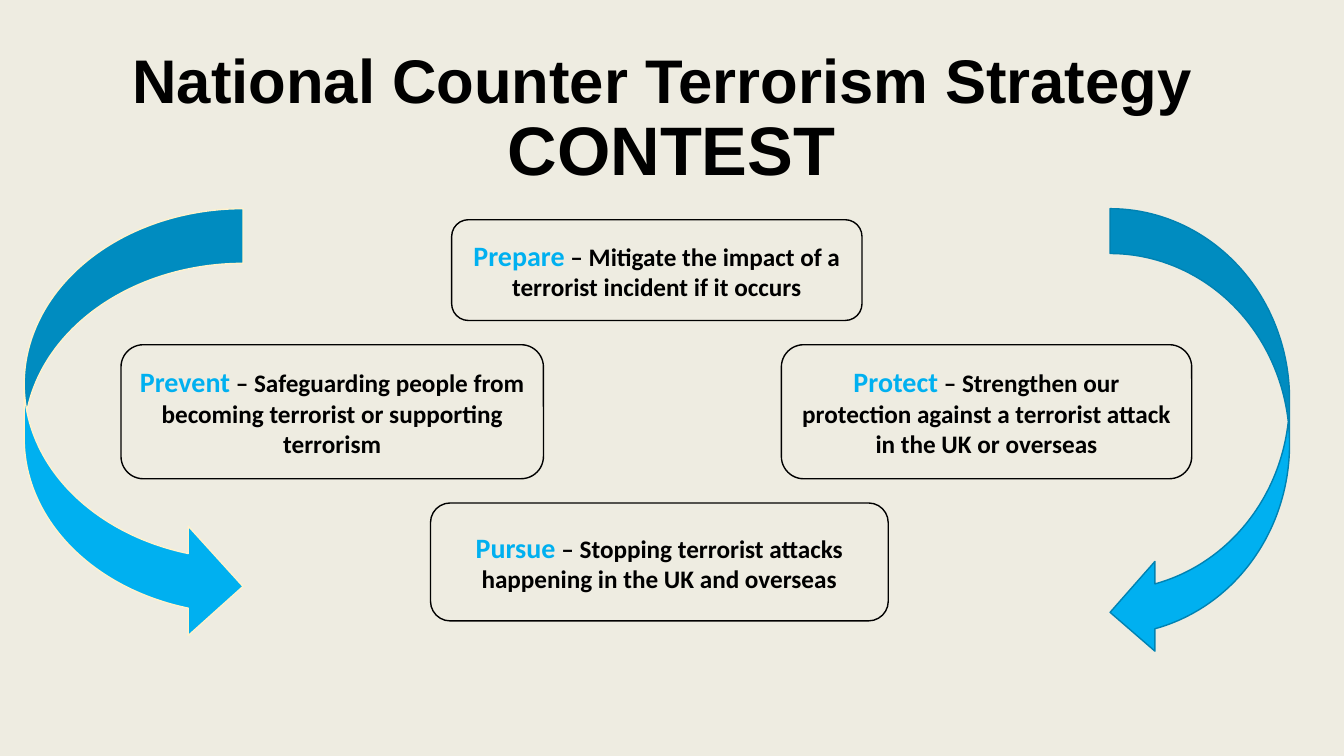
from pptx import Presentation
from pptx.dml.color import RGBColor
from pptx.enum.shapes import MSO_SHAPE
from pptx.enum.text import MSO_ANCHOR, PP_ALIGN
from pptx.util import Inches, Pt

ROUNDED = MSO_SHAPE.ROUNDED_RECTANGLE
RIGHT_ARROW = MSO_SHAPE.CURVED_RIGHT_ARROW
LEFT_ARROW = MSO_SHAPE.CURVED_LEFT_ARROW
MIDDLE, BOTTOM = MSO_ANCHOR.MIDDLE, MSO_ANCHOR.BOTTOM
CENTER = PP_ALIGN.CENTER

COLORS = {
    "paper": "EEECE1",
    "ink": "000000",
    "blue": "00B0F0",
    "dark blue": "0082B2",
    "cream": "FFF2CC",
}

STRANDS = [
    ("Prepare", "Mitigate the impact of a terrorist incident if it occurs",
     (4.48, 2.18, 4.07, 1)),
    ("Protect", "Strengthen our protection against a terrorist attack in the UK or overseas",
     (7.75, 3.42, 4.07, 1.33)),
    ("Pursue", "Stopping terrorist attacks happening in the UK and overseas",
     (4.27, 4.99, 4.54, 1.17)),
    ("Prevent", "Safeguarding people from becoming terrorist or supporting terrorism",
     (1.2, 3.42, 4.19, 1.33)),
]

ARROWS = [
    (RIGHT_ARROW, (0.24, 2.07, 2.17, 4.29), "cream"),
    (LEFT_ARROW, (11.01, 2.07, 1.78, 4.45), "dark blue"),
]


def color(name):
    return RGBColor.from_string(COLORS[name])


class SlideBuilder:
    def __init__(self, slide):
        self.slide = slide
        background = slide.background.fill
        background.solid()
        background.fore_color.rgb = color("paper")

    def shape(self, kind, place, fill, line):
        shape = self.slide.shapes.add_shape(kind, *map(Inches, place))
        shape.shadow.inherit = False
        shape.fill.solid()
        shape.fill.fore_color.rgb = color(fill)
        shape.line.color.rgb = color(line)
        shape.line.width = Pt(1)
        return shape

    def paragraph(self, box, anchor, font_name):
        """Set up the box for wrapped, centred bold text and return its paragraph."""
        frame = box.text_frame
        frame.word_wrap = True
        frame.vertical_anchor = anchor
        para = frame.paragraphs[0]
        para.alignment = CENTER
        para.font.name = font_name
        para.font.bold = True
        return para

    def span(self, para, text, size, ink):
        span = para.add_run()
        span.text = text
        span.font.size = Pt(size)
        span.font.color.rgb = color(ink)

    def title(self, first_line, second_line, place):
        box = self.slide.shapes.add_textbox(*map(Inches, place))
        para = self.paragraph(box, BOTTOM, "Arial")
        para.line_spacing = 0.9
        self.span(para, first_line, 44, "ink")
        para.add_line_break()
        self.span(para, second_line, 49, "ink")

    def strand(self, name, aim, place):
        box = self.shape(ROUNDED, place, "paper", "ink")
        para = self.paragraph(box, MIDDLE, "Calibri")
        self.span(para, name, 20, "blue")
        self.span(para, f" – {aim}", 18, "ink")

    def arrow(self, kind, place, line):
        self.shape(kind, place, "blue", line)


def main():
    deck = Presentation()
    deck.slide_width, deck.slide_height = Inches(13.33), Inches(7.5)
    page = SlideBuilder(deck.slides.add_slide(deck.slide_layouts[6]))
    page.title("National Counter Terrorism Strategy ", "CONTEST",
               (0.65, 0.23, 12.02, 1.71))
    for arrow in ARROWS:
        page.arrow(*arrow)
    for strand in STRANDS:
        page.strand(*strand)
    deck.save("out.pptx")


if __name__ == "__main__":
    main()
